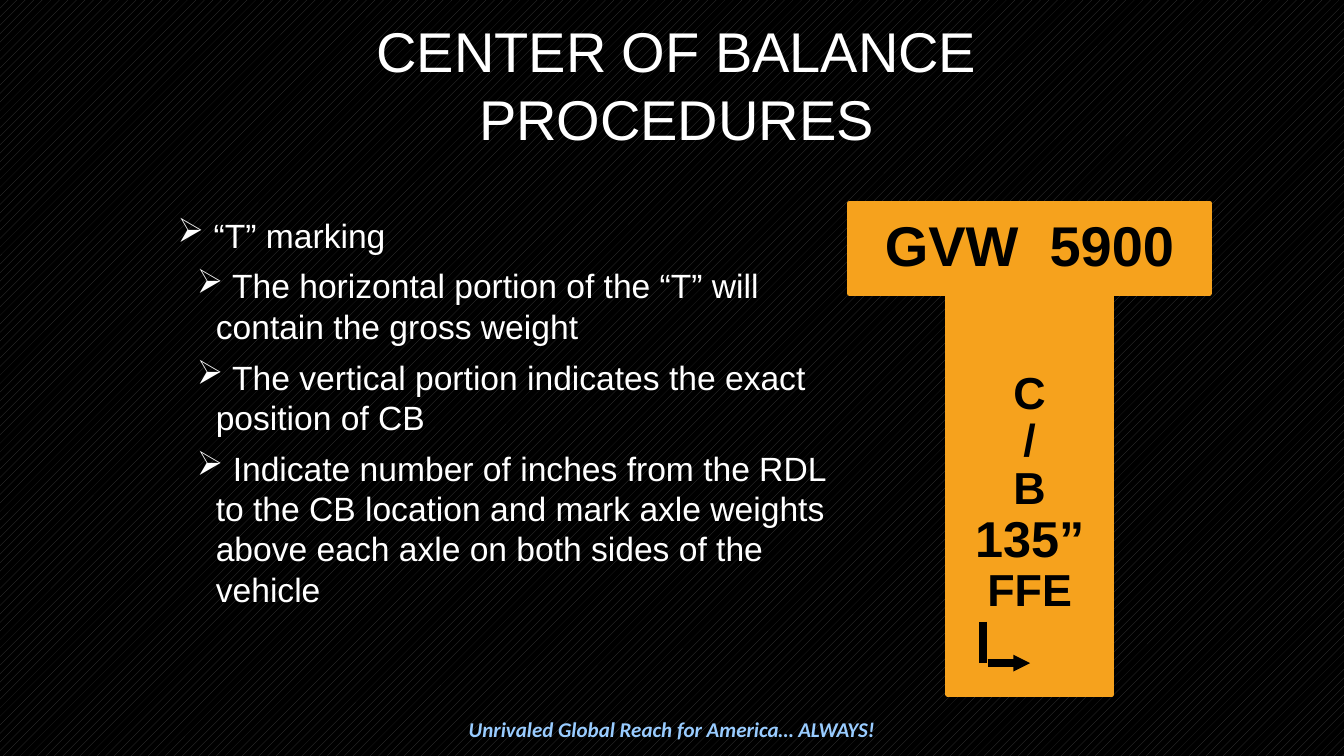
from lxml import etree
from pptx import Presentation
from pptx import util as u
from pptx.dml.color import RGBColor
from pptx.enum import dml, shapes, text
from pptx.oxml import ns

COLORS = {"back": "000000", "hatch": "404040", "white": "FFFFFF",
          "black": "000000", "motto": "99CCFF", "marking": "F6A21D"}
POINTS = [
    (0, " “T” marking"),
    (1, " The horizontal portion of the “T” will contain the gross weight"),
    (1, " The vertical portion indicates the exact position of CB"),
    (1, " Indicate number of inches from the RDL to the CB location and mark "
        "axle weights above each axle on both sides of the vehicle"),
]
STEM_LINES = [("C", 32), ("/", 32), ("B", 32), ("135”", 36), ("FFE", 32)]
HANG = 0.48


def rgb(name):
    """Return the named colour."""
    return RGBColor.from_string(COLORS[name])


def add_xml(parent, tag, **attrs):
    """Append a drawing element with attributes and return it."""
    return etree.SubElement(parent, ns.qn(tag), attrs)


def style(p, size, color, font="Arial", bold=False, italic=False):
    """Format every run of a paragraph."""
    for r in p.runs:
        r.font.name, r.font.size = font, u.Pt(size)
        r.font.bold, r.font.italic = bold, italic
        r.font.color.rgb = rgb(color)


def text_box(s, *box):
    """Add a wrapping text box and return its text frame."""
    tf = s.shapes.add_textbox(*map(u.Cm, box)).text_frame
    tf.word_wrap = True
    return tf


def centered_text(s, box, words, size, color, **look):
    """Add one centred paragraph in its own box."""
    p = text_box(s, *box).paragraphs[0]
    p.text = words
    p.alignment = text.PP_ALIGN.CENTER
    style(p, size, color, **look)


def bullet_list(s, box, points):
    """Add a two-level list with arrow bullets."""
    tf = text_box(s, *box)
    for i, (level, words) in enumerate(points):
        p = tf.add_paragraph() if i else tf.paragraphs[0]
        p.text = words
        p.level = level
        pPr = p._p.get_or_add_pPr()
        pPr.set("marL", str(u.Cm(HANG * (level + 1))))
        pPr.set("indent", str(-u.Cm(HANG)))
        add_xml(add_xml(pPr, "a:buClr"), "a:srgbClr", val=COLORS["white"])
        add_xml(pPr, "a:buChar", char="➢")
        if i:
            p.space_before = u.Pt(7.5)
        style(p, 24, "white")


def marking_block(s, box, lines):
    """Add one bar of the T with centred bold lines."""
    sp = s.shapes.add_shape(shapes.MSO_SHAPE.RECTANGLE, *map(u.Cm, box))
    sp.shadow.inherit = False
    sp.fill.solid()
    sp.fill.fore_color.rgb = rgb("marking")
    sp.line.color.rgb = rgb("marking")
    sp.line.width = u.Pt(3)
    tf = sp.text_frame
    tf.word_wrap = False
    tf.vertical_anchor = text.MSO_ANCHOR.MIDDLE
    tf.text = "\n".join(words for words, _ in lines)
    for p, (_, size) in zip(tf.paragraphs, lines):
        p.alignment = text.PP_ALIGN.CENTER
        p.line_spacing = 0.89
        style(p, size, "black", bold=True)


def thick_line(s, ends, arrow=False):
    """Add a heavy black line, with an arrowhead if asked."""
    c = s.shapes.add_connector(shapes.MSO_CONNECTOR.STRAIGHT, *map(u.Cm, ends))
    c.line.color.rgb = rgb("black")
    c.line.width = u.Pt(6)
    if arrow:
        add_xml(c.line._get_or_add_ln(), "a:tailEnd", type="triangle", w="sm", len="sm")
    add_xml(c._element.spPr, "a:effectLst")


def hatch_background(s):
    """Fill the slide with a dark pattern."""
    fill = s.background.fill
    fill.patterned()
    fill.pattern = dml.MSO_PATTERN.PERCENT_20
    fill.fore_color.rgb = rgb("hatch")
    fill.back_color.rgb = rgb("back")


def main():
    """Build the slide and save it."""
    prs = Presentation()
    prs.slide_width, prs.slide_height = u.Cm(33.87), u.Cm(19.05)
    s = prs.slides.add_slide(prs.slide_layouts[6])
    hatch_background(s)
    centered_text(s, (0, 17.93, 33.87, 0.89), "Unrivaled Global Reach for America… ALWAYS!",
                  15, "motto", font="Calibri", bold=True, italic=True)
    bullet_list(s, (4.23, 5.28, 17.58, 13.34), POINTS)
    marking_block(s, (21.41, 5.11, 9.07, 2.29), [("GVW  5900", 40)])
    marking_block(s, (23.88, 7.37, 4.14, 10.13), STEM_LINES)
    thick_line(s, (24.77, 15.67, 24.77, 16.71))
    thick_line(s, (24.89, 16.71, 25.96, 16.71), arrow=True)
    centered_text(s, (4.45, 0.3, 25.2, 3.68), "CENTER OF BALANCE PROCEDURES", 40, "white")
    prs.save("out.pptx")


if __name__ == "__main__":
    main()
